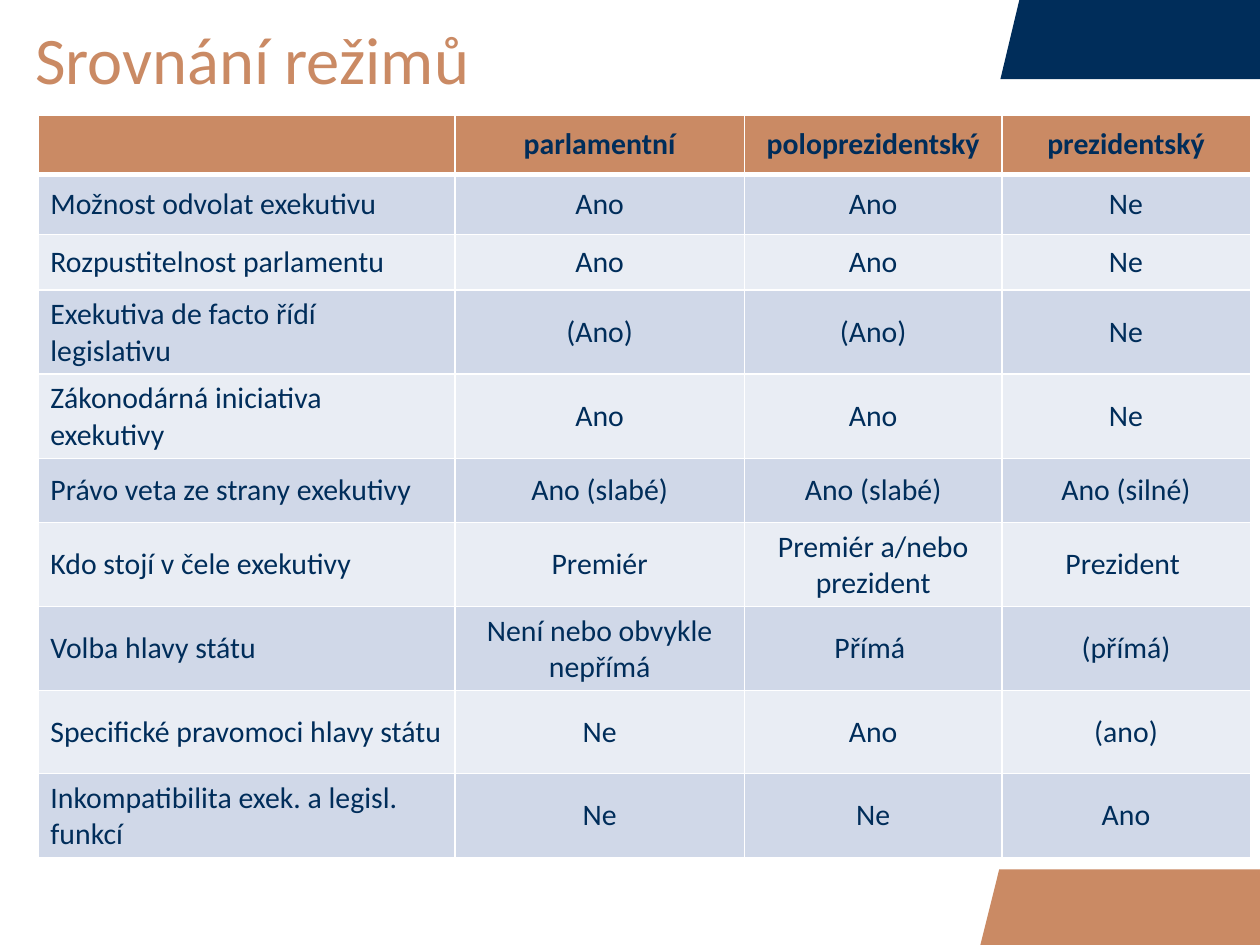
"""Build a slide with a table comparing three types of political regime."""
from lxml.etree import SubElement
from pptx import Presentation
from pptx.dml.color import RGBColor
from pptx.enum.text import MSO_ANCHOR, PP_ALIGN
from pptx.oxml.ns import qn
from pptx.util import Pt

NAVY = RGBColor(0x00, 0x2D, 0x5A)
COPPER = RGBColor(0xCA, 0x8A, 0x64)
BAND_DARK = RGBColor(0xD0, 0xD8, 0xE8)
BAND_LIGHT = RGBColor(0xE9, 0xED, 0xF4)
WHITE = RGBColor(0xFF, 0xFF, 0xFF)
FONT = "Calibri"

COLUMN_WIDTHS = (238.3, 165.6, 147, 142)
ROW_HEIGHTS = (33.8, 34.5, 31.7, 47.5, 47.5, 36.7, 47.5, 47.5, 47.5, 47.5)
REGIMES = (
    ("", "parlamentní", "poloprezidentský", "prezidentský"),
    ("Možnost odvolat exekutivu", "Ano", "Ano", "Ne"),
    ("Rozpustitelnost parlamentu", "Ano", "Ano", "Ne"),
    ("Exekutiva de facto řídí legislativu", "(Ano)", "(Ano)", "Ne"),
    ("Zákonodárná iniciativa exekutivy", "Ano", "Ano", "Ne"),
    ("Právo veta ze strany exekutivy", "Ano (slabé)", "Ano (slabé)", "Ano (silné)"),
    ("Kdo stojí v čele exekutivy", "Premiér", "Premiér a/nebo prezident", "Prezident "),
    ("Volba hlavy státu", "Není nebo obvykle nepřímá", "Přímá ", "(přímá)"),
    ("Specifické pravomoci hlavy státu", "Ne", "Ano", "(ano)"),
    ("Inkompatibilita exek. a legisl. funkcí", "Ne", "Ne", "Ano"),
)


def add_corner(slide, points, color):
    """Draw a slanted corner band through the given points."""
    start, *others = [(Pt(x), Pt(y)) for x, y in points]
    builder = slide.shapes.build_freeform(*start)
    builder.add_line_segments(others, close=True)
    shape = builder.convert_to_shape()
    shape.shadow.inherit = False
    shape.fill.solid()
    shape.fill.fore_color.rgb = color
    shape.line.fill.background()


def add_run(paragraph, text, size, color, bold=False):
    """Append a formatted run to a paragraph."""
    run = paragraph.add_run()
    run.text = text
    run.font.name = FONT
    run.font.size = Pt(size)
    run.font.color.rgb = color
    run.font.bold = bold


def add_title(slide, text):
    """Add the slide title."""
    frame = slide.shapes.add_textbox(Pt(0), Pt(10), Pt(707), Pt(46)).text_frame
    frame.word_wrap = True
    frame.vertical_anchor = MSO_ANCHOR.MIDDLE
    frame.margin_left = frame.margin_right = Pt(20)
    add_run(frame.paragraphs[0], text, 38, COPPER)


def set_borders(cell, widths):
    """Give a cell white borders; widths maps each side tag to its width."""
    properties = cell._tc.get_or_add_tcPr()
    for position, (side, width) in enumerate(widths.items()):
        line = SubElement(properties, qn(f"a:{side}"), w=str(Pt(width)))
        fill = SubElement(line, qn("a:solidFill"))
        SubElement(fill, qn("a:srgbClr"), val=str(WHITE))
        properties.remove(line)
        properties.insert(position, line)


def fill_cell(cell, text, row, column):
    """Write and style one table cell according to its place."""
    is_header = row == 0
    cell.fill.solid()
    cell.fill.fore_color.rgb = COPPER if is_header else (BAND_LIGHT, BAND_DARK)[row % 2]
    cell.vertical_anchor = MSO_ANCHOR.MIDDLE
    set_borders(cell, {"lnL": 1, "lnR": 1, "lnT": 3 if row == 1 else 1,
                       "lnB": 3 if is_header else 1})
    paragraph = cell.text_frame.paragraphs[0]
    paragraph.alignment = PP_ALIGN.CENTER if column else PP_ALIGN.LEFT
    if text:
        add_run(paragraph, text, 17, NAVY, is_header)


def add_comparison(slide):
    """Add the table of regimes."""
    table = slide.shapes.add_table(
        len(ROW_HEIGHTS), len(COLUMN_WIDTHS), Pt(21.6), Pt(65.8),
        Pt(sum(COLUMN_WIDTHS)), Pt(sum(ROW_HEIGHTS))).table
    for column, width in zip(table.columns, COLUMN_WIDTHS):
        column.width = Pt(width)
    for row, height in zip(table.rows, ROW_HEIGHTS):
        row.height = Pt(height)
    for row, texts in enumerate(REGIMES):
        for column, text in enumerate(texts):
            fill_cell(table.cell(row, column), text, row, column)


def main():
    """Assemble and save the slide."""
    presentation = Presentation()
    presentation.slide_width, presentation.slide_height = Pt(720), Pt(540)
    slide = presentation.slides.add_slide(presentation.slide_layouts[6])
    add_corner(slide, [(571.7, 45.2), (582.5, 0), (720, 0), (720, 45.2)], NAVY)
    add_corner(slide, [(560.2, 540), (571, 496.8), (720, 496.8), (720, 540)], COPPER)
    add_title(slide, "Srovnání režimů")
    add_comparison(slide)
    presentation.save("out.pptx")


if __name__ == "__main__":
    main()
